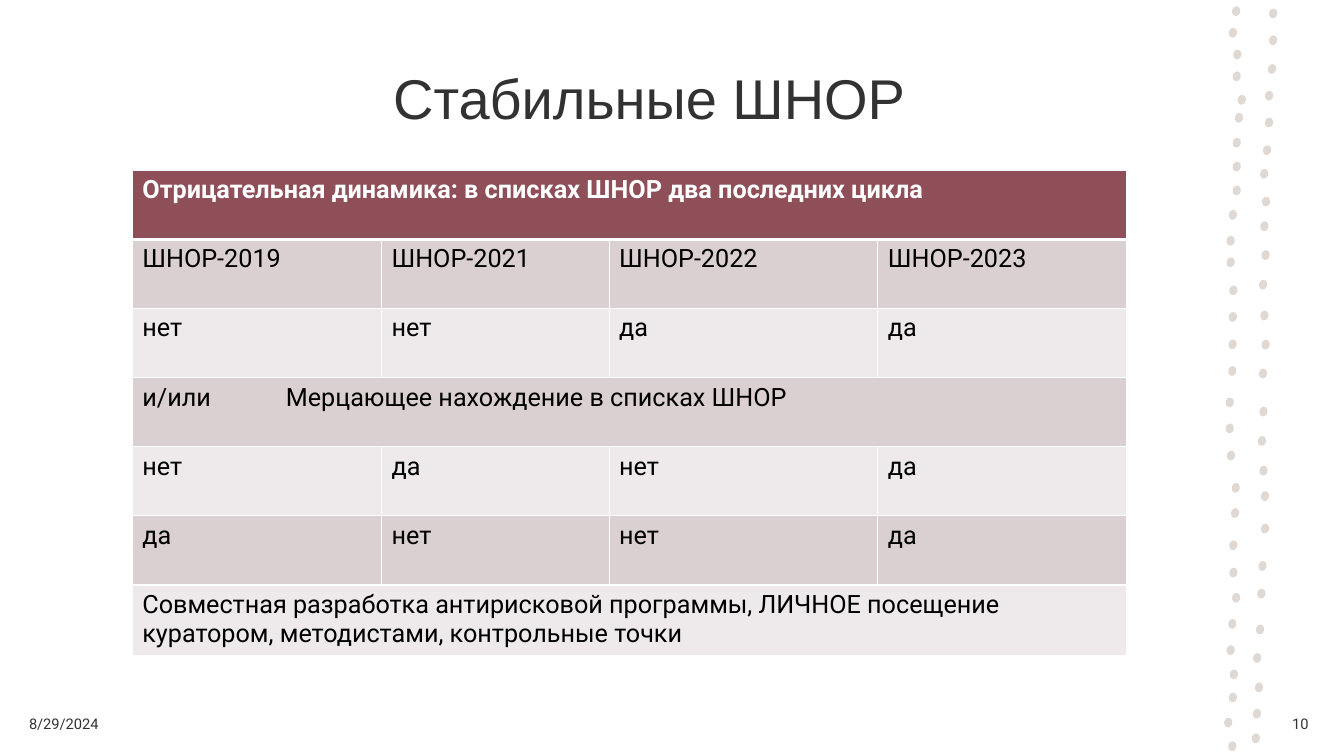
from pptx import Presentation
from pptx.dml.color import RGBColor
from pptx.enum.shapes import MSO_SHAPE
from pptx.enum.text import MSO_ANCHOR, PP_ALIGN
from pptx.oxml import parse_xml
from pptx.oxml.ns import nsdecls
from pptx.util import Pt

COLORS = {
    "dot": "E0D8D2",
    "ink": "323232",
    "header": "8F4F58",
    "dark_band": "DBD0D1",
    "light_band": "EEE9EA",
    "cell_text": "000000",
    "white": "FFFFFF",
}
TITLE_FORMAT = {"name": "Arial", "size": Pt(40)}
FOOTER_FORMAT = {"name": "Roboto", "size": Pt(10.5)}
HEADER_FORMAT = {"name": "Roboto", "size": Pt(18), "bold": True}
BODY_FORMAT = {"name": "Roboto", "size": Pt(18), "bold": False}

COLUMN_WIDTHS = [178, 162.6, 192, 178]
ROW_HEIGHT = 49.37
TAB_STOP = 102.5
STATUS_ROWS = [
    ["Отрицательная динамика: в списках ШНОР два последних цикла"],
    ["ШНОР-2019", "ШНОР-2021", "ШНОР-2022", "ШНОР-2023"],
    ["нет", "нет", "да", "да"],
    ["и/или\tМерцающее нахождение в списках ШНОР"],
    ["нет", "да", "нет", "да"],
    ["да", "нет", "нет", "да"],
    ["Совместная разработка антирисковой программы, ЛИЧНОЕ посещение\n"
     "куратором, методистами, контрольные точки"],
]

DOT_WIDTH, DOT_HEIGHT, DOT_TILT = 5.8, 7, 12
LEFT_DOTS = [
    (883, 8), (880.6, 23.5), (883.8, 39), (883.4, 54.5), (887, 71.3),
    (885, 84.2), (883.4, 102), (883.4, 119), (883.4, 136), (880.6, 153.5),
    (879, 172), (879, 187.4), (881, 207.4), (880.6, 226.4), (880.4, 246),
    (880.2, 265), (878.4, 287.5), (878.4, 306), (879.3, 325.4), (882.7, 348.5),
    (882.2, 366.5), (881, 389.5), (881, 409), (883, 427), (880.2, 445.7),
    (879, 464.4), (881.3, 481.7), (880.6, 498.2), (877.3, 516.2), (880.2, 533),
]
RIGHT_DOTS = [
    (909.4, 9.6), (909.4, 28.8), (908.6, 49.3), (906.5, 68.4), (906.5, 87.5),
    (905, 107.3), (903, 124.2), (904.3, 144), (903.2, 161.6), (904, 182.2),
    (902.2, 203.4), (903.2, 225.4), (904, 246.2), (902.2, 266.8), (902.5, 294),
    (901.4, 315), (902.5, 336.2), (903.6, 354.4), (903.6, 377.6),
    (901.8, 404.3), (901, 424), (900, 449.6), (898, 470), (899.3, 491),
    (897.8, 509.8), (897, 527.4),
]


def rgb(color):
    return RGBColor.from_string(COLORS[color])


def apply_format(font, values, color):
    for attribute, value in values.items():
        setattr(font, attribute, value)
    font.color.rgb = rgb(color)


def add_dot(slide, center_x, center_y):
    dot = slide.shapes.add_shape(
        MSO_SHAPE.OVAL, Pt(center_x - DOT_WIDTH / 2), Pt(center_y - DOT_HEIGHT / 2),
        Pt(DOT_WIDTH), Pt(DOT_HEIGHT))
    dot.shadow.inherit = False
    dot.rotation = DOT_TILT
    dot.fill.solid()
    dot.fill.fore_color.rgb = rgb("dot")
    dot.line.fill.background()


def add_label(slide, text, bounds, values, alignment):
    label = slide.shapes.add_textbox(*map(Pt, bounds)).text_frame
    label.word_wrap = True
    label.vertical_anchor = MSO_ANCHOR.MIDDLE
    label.text = text
    paragraph = label.paragraphs[0]
    paragraph.alignment = alignment
    apply_format(paragraph.runs[0].font, values, "ink")


def set_borders(cell, widths):
    properties = cell._tc.get_or_add_tcPr()
    for position, (side, width) in enumerate(widths.items()):
        properties.insert(position, parse_xml(
            f'<a:ln{side} {nsdecls("a")} w="{Pt(width)}"><a:solidFill>'
            f'<a:srgbClr val="{COLORS["white"]}"/></a:solidFill></a:ln{side}>'))


def add_tab_stop(paragraph):
    paragraph._p.get_or_add_pPr().append(parse_xml(
        f'<a:tabLst {nsdecls("a")}><a:tab pos="{Pt(TAB_STOP)}" algn="l"/></a:tabLst>'))


def fill_cell(cell, text, values, text_color, band):
    cell.text_frame.text = text
    for paragraph in cell.text_frame.paragraphs:
        apply_format(paragraph.runs[0].font, values, text_color)
        if "\t" in text:
            add_tab_stop(paragraph)
    cell.fill.solid()
    cell.fill.fore_color.rgb = rgb(band)


def add_status_table(slide):
    table = slide.shapes.add_table(
        len(STATUS_ROWS), len(COLUMN_WIDTHS), Pt(94.5), Pt(121.7),
        Pt(sum(COLUMN_WIDTHS)), Pt(ROW_HEIGHT * len(STATUS_ROWS))).table
    for column, width in zip(table.columns, COLUMN_WIDTHS):
        column.width = Pt(width)
    for index, texts in enumerate(STATUS_ROWS):
        table.rows[index].height = Pt(ROW_HEIGHT)
        if index == 0:
            values, text_color, band = HEADER_FORMAT, "white", "header"
        else:
            values, text_color = BODY_FORMAT, "cell_text"
            band = "dark_band" if index % 2 else "light_band"
        borders = {"L": 1, "R": 1, "T": 3 if index == 1 else 1,
                   "B": 3 if index == 0 else 1}
        for cell in table.rows[index].cells:
            set_borders(cell, borders)
        if len(texts) == 1:
            table.cell(index, 0).merge(table.cell(index, len(COLUMN_WIDTHS) - 1))
        for column, text in enumerate(texts):
            fill_cell(table.cell(index, column), text, values, text_color, band)


def main():
    presentation = Presentation()
    presentation.slide_width = Pt(960)
    presentation.slide_height = Pt(540)
    slide = presentation.slides.add_slide(presentation.slide_layouts[6])
    for center in LEFT_DOTS + RIGHT_DOTS:
        add_dot(slide, *center)
    add_label(slide, "Стабильные ШНОР", (84.2, 39.6, 759, 59.8),
              TITLE_FORMAT, PP_ALIGN.CENTER)
    add_label(slide, "8/29/2024", (13.7, 502.6, 224, 28.8),
              FOOTER_FORMAT, PP_ALIGN.LEFT)
    add_label(slide, "10", (902.2, 502.6, 39.6, 28.8),
              FOOTER_FORMAT, PP_ALIGN.RIGHT)
    add_status_table(slide)
    presentation.save("out.pptx")


if __name__ == "__main__":
    main()
